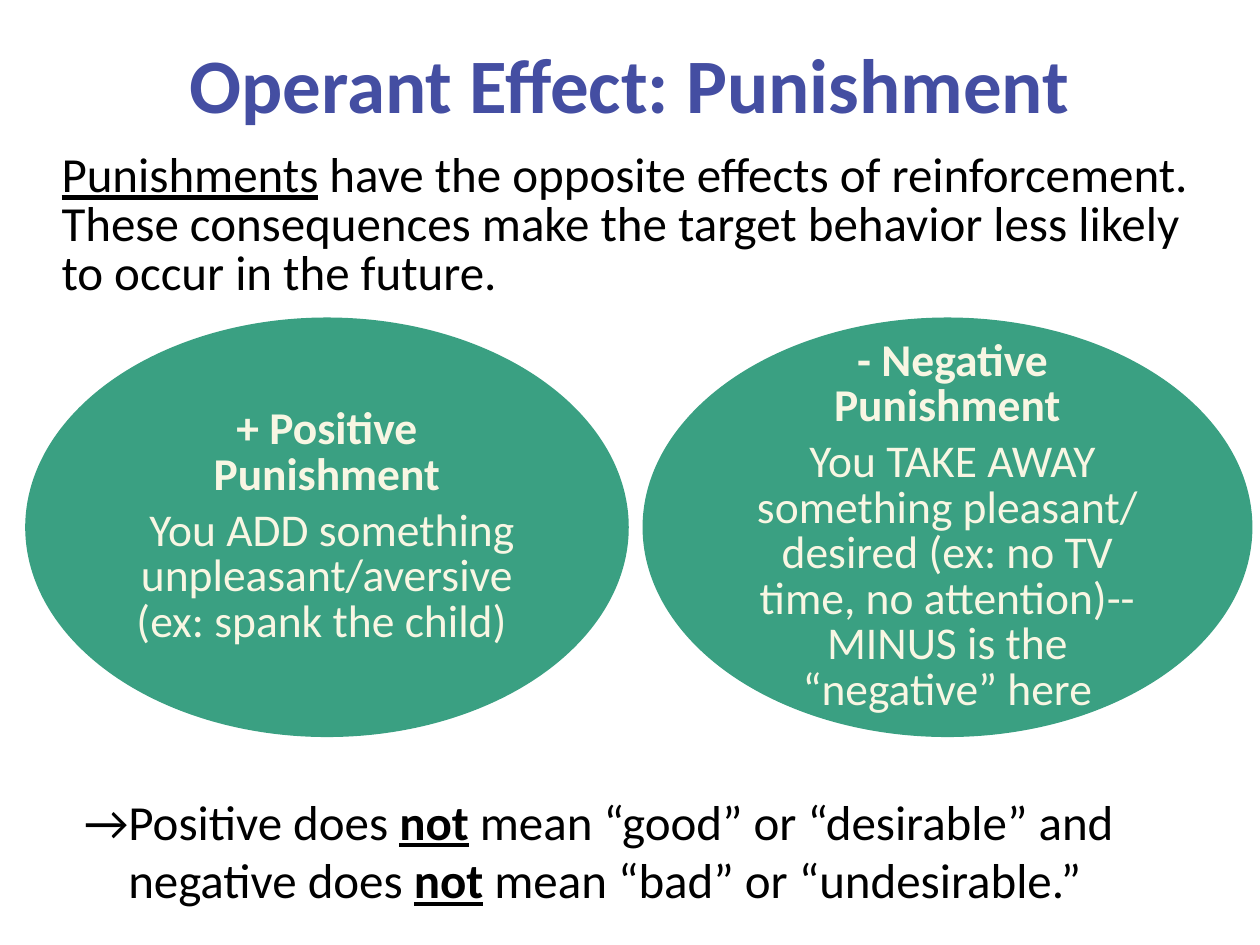
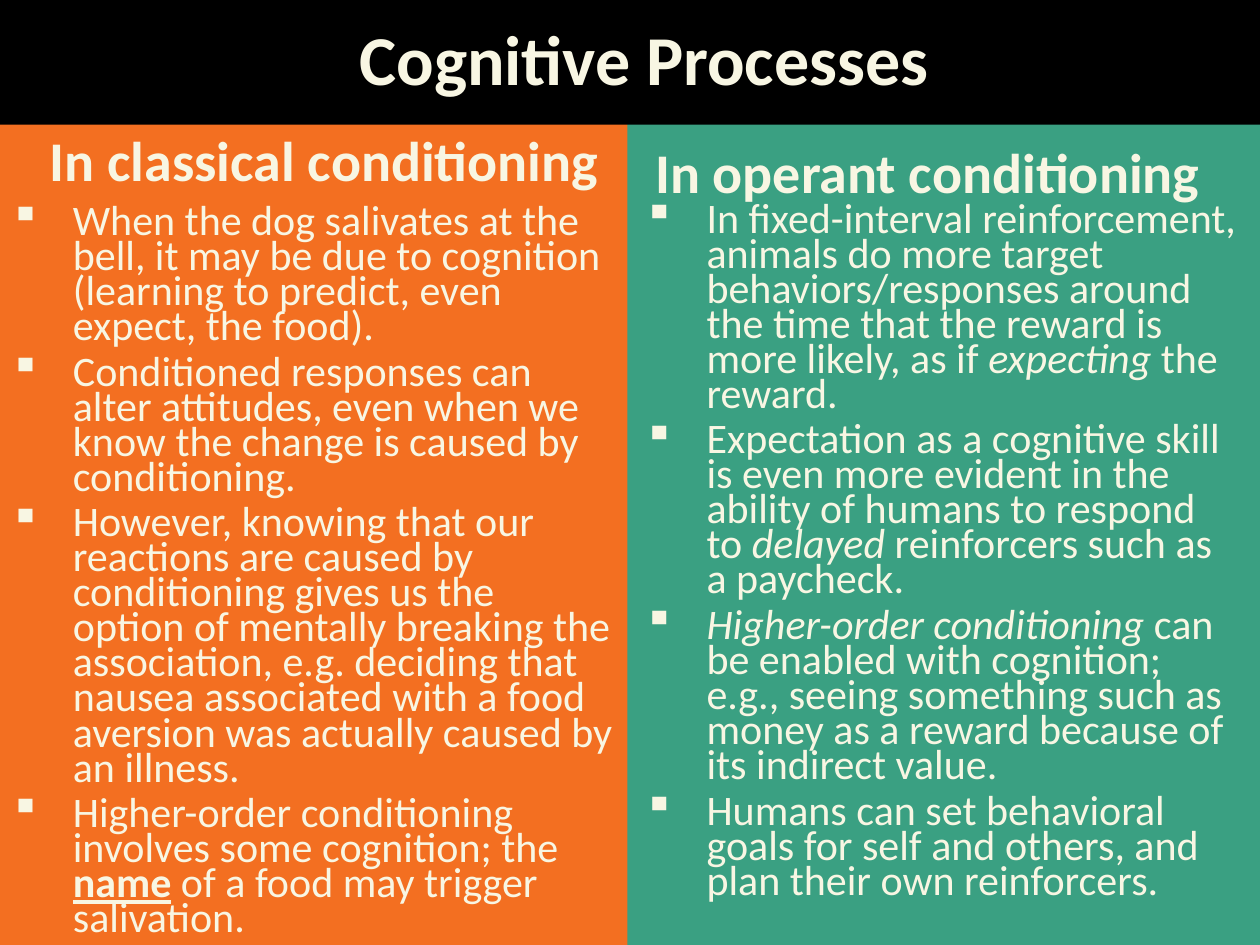
from collections import namedtuple
from dataclasses import dataclass

import pptx
import pptx.dml.color
import pptx.enum.shapes
import pptx.enum.text
import pptx.oxml.ns
import pptx.util
from lxml import etree

Inches = pptx.util.Inches
Pt = pptx.util.Pt
ALIGN = pptx.enum.text.PP_ALIGN
ANCHOR = pptx.enum.text.MSO_ANCHOR
SHAPE = pptx.enum.shapes.MSO_SHAPE

Box = namedtuple("Box", "left top width height")


@dataclass(frozen=True)
class Theme:
    font: str = "Calibri"
    blue: str = "444EA2"
    green: str = "3AA082"
    orange: str = "F36F21"
    cream: str = "F8F6E3"
    black: str = "000000"
    title: int = 44
    banner: int = 40
    heading: int = 32
    body: int = 28
    oval: int = 26
    bullet: int = 24
    gap: int = 6
    insets: tuple = (0.1, 0.05, 0.1, 0.05)
    wide_insets: tuple = (0.3, 0.05, 0.1, 0.05)


THEME = Theme()


def rgb(color):
    return pptx.dml.color.RGBColor.from_string(color)


def within(box, offset):
    return Box(box.left + offset.left, box.top + offset.top, offset.width, offset.height)


def add_filled(slide, kind, box, color):
    shape = slide.shapes.add_shape(kind, *map(Inches, box))
    shape.shadow.inherit = False
    shape.fill.solid()
    shape.fill.fore_color.rgb = rgb(color)
    shape.line.fill.background()
    return shape


def add_text(slide, box, paragraphs, size, color, **layout):
    holder = slide.shapes.add_textbox(*map(Inches, box))
    write(holder.text_frame, paragraphs, size, color, **layout)


def write(frame, paragraphs, size, color, align=ALIGN.LEFT, anchor=ANCHOR.TOP,
          line=None, before=0, after=0, bullet=None, margins=(), insets=THEME.insets):
    frame.word_wrap = True
    frame.vertical_anchor = anchor
    (frame.margin_left, frame.margin_top,
     frame.margin_right, frame.margin_bottom) = map(Inches, insets)
    for index, runs in enumerate(paragraphs):
        paragraph = frame.paragraphs[0] if index == 0 else frame.add_paragraph()
        properties = paragraph._p.get_or_add_pPr()
        if bullet:
            properties.set("marL", str(Inches(0.5)))
            properties.set("indent", str(Inches(-0.5)))
            mark = etree.SubElement(properties, pptx.oxml.ns.qn("a:buChar"))
            mark.set("char", bullet)
        elif margins:
            properties.set("marL", str(Inches(margins[index])))
        paragraph.alignment = align
        if line:
            paragraph.line_spacing = Pt(line)
        paragraph.space_before = Pt(before if index else 0)
        paragraph.space_after = Pt(after)
        for words, style in runs:
            run = paragraph.add_run()
            run.text = words
            run.font.name = THEME.font
            run.font.size = Pt(size)
            run.font.color.rgb = rgb(color)
            run.font.bold = "b" in style
            run.font.italic = "i" in style
            run.font.underline = "u" in style


def add_oval(slide, box, paragraphs):
    oval = add_filled(slide, SHAPE.OVAL, box, THEME.green)
    write(oval.text_frame, paragraphs, THEME.oval, THEME.cream, align=ALIGN.CENTER,
          anchor=ANCHOR.MIDDLE, line=26, before=THEME.gap)


def add_column(slide, box, color, heading, heading_offset, heading_layout,
               points, points_offset):
    add_filled(slide, SHAPE.RECTANGLE, box, color)
    add_text(slide, within(box, heading_offset), [[(heading, "b")]], THEME.heading,
             THEME.cream, anchor=ANCHOR.MIDDLE, insets=THEME.wide_insets, **heading_layout)
    add_text(slide, within(box, points_offset), points, THEME.bullet, THEME.cream,
             line=20, after=THEME.gap, bullet="▪")


def add_banner(slide, box, title):
    banner = add_filled(slide, SHAPE.RECTANGLE, box, THEME.black)
    write(banner.text_frame, [[(title, "b")]], THEME.banner, THEME.cream,
          align=ALIGN.CENTER, anchor=ANCHOR.MIDDLE, line=42, insets=THEME.wide_insets)


def build_punishment(slide):
    add_text(slide, Box(0, 0, 10, 1.32), [[("Operant Effect: Punishment", "b")]],
             THEME.title, THEME.blue, align=ALIGN.CENTER, anchor=ANCHOR.MIDDLE)
    add_text(slide, Box(0.39, 1.17, 9.43, 1.31), [[
        ("Punishments", "u"),
        (" have the opposite effects of reinforcement. These consequences make the "
         "target behavior less likely to occur in the future.", ""),
    ]], THEME.body, THEME.black, line=28)
    add_oval(slide, Box(0.2, 2.52, 4.79, 3.33), [
        [("+ Positive Punishment", "b")],
        [(" You ADD something unpleasant/aversive (ex: spank the child) ", "")],
    ])
    add_oval(slide, Box(5.1, 2.52, 4.84, 3.33), [
        [(" ", ""), ("- Negative Punishment", "b")],
        [(" You TAKE AWAY something pleasant/ desired (ex: no TV time, no attention)"
          "--MINUS is the “negative” here", "")],
    ])
    add_text(slide, Box(0.57, 6.23, 9.07, 1.04), [
        [("→Positive does ", ""), ("not", "bu"), (" mean “good” or “desirable” and", "")],
        [("negative does ", ""), ("not", "bu"), (" mean “bad” or “undesirable.”", "")],
    ], THEME.body, THEME.black, margins=(0, 0.35))


def build_cognition(slide):
    add_column(
        slide, Box(-0.02, 0, 9.97, 7.51), THEME.orange,
        "In classical conditioning", Box(-0.16, 0.83, 5.31, 1.07),
        {"align": ALIGN.CENTER, "line": 24, "after": THEME.gap},
        [
            [("When the dog salivates at the bell, it may be due to cognition "
              "(learning to predict, even expect, the food).", "")],
            [("Conditioned responses can alter attitudes, even when we know the change "
              "is caused by conditioning.", "")],
            [("However, knowing that our reactions are caused by conditioning gives us "
              "the option of mentally breaking the association, e.g. deciding that "
              "nausea associated with a food aversion was actually caused by an "
              "illness.", "")],
            [("Higher-order conditioning involves some cognition; the ", ""),
             ("name", "bu"), (" of a food may trigger salivation.", "")],
        ], Box(0, 1.61, 4.99, 5.98))
    add_column(
        slide, Box(4.98, 0.01, 5.03, 7.5), THEME.green,
        "In operant conditioning", Box(-0.08, 0.79, 5.04, 1.07), {"line": 42},
        [
            [("In fixed-interval reinforcement, animals do more target "
              "behaviors/responses around the time that the reward is more likely, "
              "as if ", ""), ("expecting", "i"), (" the reward.", "")],
            [("Expectation as a cognitive skill is even more evident in the ability of "
              "humans to respond to ", ""), ("delayed", "i"),
             (" reinforcers such as a paycheck.", "")],
            [("Higher-order conditioning ", "i"),
             ("can be enabled with cognition; e.g., seeing something such as money as "
              "a reward because of its indirect value.", "")],
            [("Humans can set behavioral goals for self and others, and plan their own "
              "reinforcers.", "")],
        ], Box(0.03, 1.58, 4.9, 5.98))
    add_banner(slide, Box(-0.02, 0, 10.06, 0.99), "Cognitive Processes")


def main():
    deck = pptx.Presentation()
    deck.slide_width = Inches(10)
    deck.slide_height = Inches(7.5)
    for build in (build_punishment, build_cognition):
        build(deck.slides.add_slide(deck.slide_layouts[6]))
    deck.save("out.pptx")


if __name__ == "__main__":
    main()
